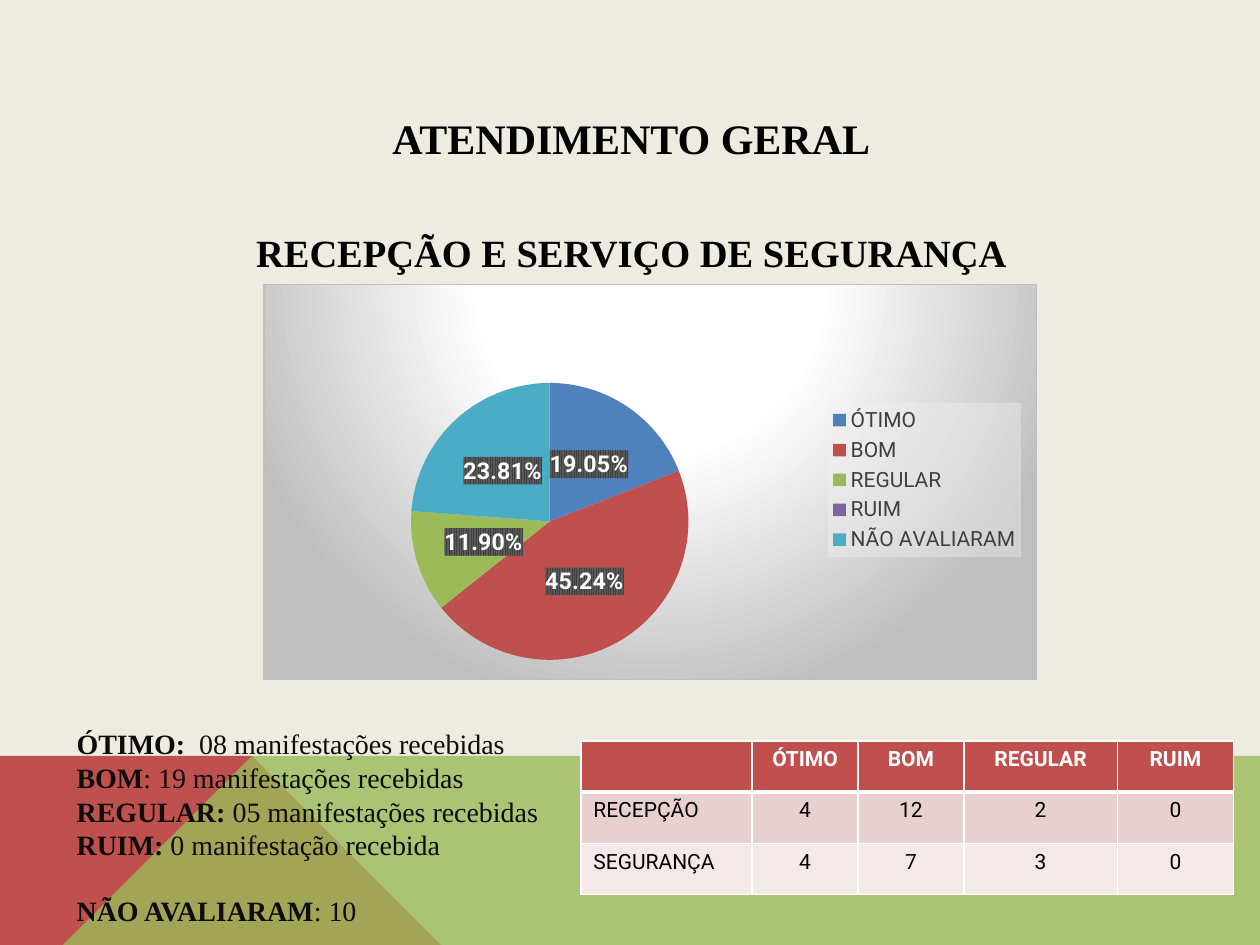
from lxml.etree import SubElement
from pptx import Presentation
from pptx.chart.data import CategoryChartData
from pptx.dml.color import RGBColor
from pptx.enum.chart import XL_CHART_TYPE, XL_LABEL_POSITION, XL_LEGEND_POSITION
from pptx.enum.text import PP_ALIGN
from pptx.oxml import parse_xml
from pptx.oxml.ns import nsdecls, qn
from pptx.util import Inches, Pt

HUES = {
    "back": "EEECE1", "red": "C0504D", "green": "9BBB59", "blue": "4F81BD",
    "violet": "8064A2", "aqua": "4BACC6", "black": "000000", "ink": "0D0D0D",
    "gray": "404040", "white": "FFFFFF", "rose": "E8D0D0", "pale": "F4E9E9",
}
SERIF, SANS = "Times New Roman", "Roboto"
SLICES = [
    ("ÓTIMO", 19.05, "blue"), ("BOM", 45.24, "red"), ("REGULAR", 11.9, "green"),
    ("RUIM", 0, "violet"), ("NÃO AVALIARAM", 23.81, "aqua"),
]
HEADS = [
    ("ATENDIMENTO GERAL", 24, 0),
    ("RECEPÇÃO E SERVIÇO DE SEGURANÇA", 22, 38),
]
NOTES = [
    ("ÓTIMO:  ", "08 manifestações recebidas", 0),
    ("BOM", ": 19 manifestações recebidas", 0),
    ("REGULAR: ", "05 manifestações recebidas", 0),
    ("RUIM: ", "0 manifestação recebida", 0),
    ("NÃO AVALIARAM", ": 10", 18.4),
]
ROWS = [
    ["", "ÓTIMO", "BOM", "REGULAR", "RUIM"],
    ["RECEPÇÃO", "4", "12", "2", "0"],
    ["SEGURANÇA", "4", "7", "3", "0"],
]
COLS = [1.36, 0.84, 0.84, 1.22, 0.92]


def tint(name):
    return RGBColor.from_string(HUES[name])


def style(font, hue, **look):
    for key, value in look.items():
        setattr(font, key, value)
    font.color.rgb = tint(hue)


def add_wedge(slide, points, hue, alpha=None):
    form = slide.shapes.build_freeform(*points[0], scale=Inches(1))
    form.add_line_segments(points[1:], close=True)
    wedge = form.convert_to_shape()
    wedge.shadow.inherit = False
    wedge.fill.solid()
    wedge.fill.fore_color.rgb = tint(hue)
    wedge.line.fill.background()
    if alpha:
        clr = wedge.fill._xPr.find(".//" + qn("a:srgbClr"))
        SubElement(clr, qn("a:alpha"), val=str(alpha * 1000))


def add_box(slide, *place):
    frame = slide.shapes.add_textbox(*map(Inches, place)).text_frame
    frame.word_wrap = True
    return frame


def add_line(frame, first, runs, gap, hue, size, align=None):
    """Add a paragraph of (text, bold) runs below a gap in points."""
    para = frame.paragraphs[0] if first else frame.add_paragraph()
    para.alignment = align
    para.space_before = Pt(gap)
    for text, bold in runs:
        run = para.add_run()
        run.text = text
        style(run.font, hue, name=SERIF, size=Pt(size), bold=bold)


def set_place(parent, x, y, w, h, inner=False):
    """Give a chart part a manual layout, in fractions of the chart."""
    target = '<c:layoutTarget val="inner"/>' if inner else ""
    modes = '<c:xMode val="edge"/><c:yMode val="edge"/>'
    sizes = "".join(f'<c:{k} val="{v}"/>' for k, v in zip("xywh", (x, y, w, h)))
    for old in parent.findall(qn("c:layout")):
        parent.remove(old)
    layout = parse_xml(f'<c:layout {nsdecls("c")}><c:manualLayout>{target}{modes}'
                       f'{sizes}</c:manualLayout></c:layout>')
    if inner:
        parent.insert(0, layout)
    else:
        parent.find(qn("c:legendPos")).addnext(layout)


def make_props(body):
    return parse_xml(f'<c:spPr {nsdecls("c", "a")}>{body}</c:spPr>')


def paint_back(chart):
    stops = "".join(f'<a:gs pos="{pos}000"><a:srgbClr val="{hue}"/></a:gs>'
                    for pos, hue in [(0, "FFFFFF"), (39, "FFFFFF"), (100, "BFBFBF")])
    chart._chartSpace.find(qn("c:chart")).addnext(make_props(
        f'<a:gradFill><a:gsLst>{stops}</a:gsLst><a:path path="circle">'
        '<a:fillToRect l="50000" t="-80000" r="50000" b="180000"/></a:path></a:gradFill>'
        '<a:ln w="9525"><a:solidFill><a:srgbClr val="BFBFBF"/></a:solidFill></a:ln>'))


def add_labels(plot):
    plot.has_data_labels = True
    labels = plot.data_labels
    looks = {"show_percentage": True, "show_value": False, "number_format": "0.00%",
             "number_format_is_linked": False, "position": XL_LABEL_POSITION.CENTER}
    for key, value in looks.items():
        setattr(labels, key, value)
    style(labels.font, "white", name=SANS, size=Pt(13.3), bold=True)
    root = labels._element
    root.find(qn("c:numFmt")).addnext(make_props(
        '<a:pattFill prst="narVert"><a:fgClr><a:srgbClr val="404040"/></a:fgClr>'
        '<a:bgClr><a:srgbClr val="595959"/></a:bgClr></a:pattFill>'))
    series = plot.series[0]._element
    series.find(qn("c:cat")).addprevious(root)
    root.insert(0, parse_xml(f'<c:dLbl {nsdecls("c")}><c:idx val="3"/>'
                             '<c:delete val="1"/></c:dLbl>'))


def add_pie(slide):
    data = CategoryChartData()
    data.categories = [name for name, _, _ in SLICES]
    data.add_series("Series 1", [value for _, value, _ in SLICES])
    place = map(Inches, (2.09, 2.25, 6.14, 3.15))
    chart = slide.shapes.add_chart(XL_CHART_TYPE.PIE, *place, data).chart
    chart.has_title = False
    style(chart.font, "black", name=SANS, size=Pt(10))
    paint_back(chart)
    plot = chart.plots[0]
    plot.vary_by_categories = True
    for i, (_, _, hue) in enumerate(SLICES):
        fill = plot.series[0].points[i].format.fill
        fill.solid()
        fill.fore_color.rgb = tint(hue)
    add_labels(plot)
    set_place(chart._chartSpace.find(".//" + qn("c:plotArea")),
              0.19, 0.25, 0.36, 0.7, inner=True)
    chart.has_legend = True
    legend = chart.legend
    legend.position = XL_LEGEND_POSITION.RIGHT
    legend.include_in_layout = False
    style(legend.font, "gray", name=SANS, size=Pt(12))
    root = legend._element
    set_place(root, 0.73, 0.3, 0.25, 0.39)
    root.find(qn("c:overlay")).addnext(make_props(
        '<a:solidFill><a:srgbClr val="F2F2F2"><a:alpha val="39000"/></a:srgbClr></a:solidFill>'))


def set_edges(cell, base):
    """Draw white cell borders, with the bottom one base points wide."""
    props = cell._tc.get_or_add_tcPr()
    for i, (side, width) in enumerate(zip("LRTB", (1, 1, 1, base))):
        props.insert(i, parse_xml(
            f'<a:ln{side} {nsdecls("a")} w="{width * 12700}"><a:solidFill>'
            f'<a:srgbClr val="{HUES["white"]}"/></a:solidFill></a:ln{side}>'))


def add_grid(slide):
    place = map(Inches, (4.61, 5.88, sum(COLS), 1.22))
    table = slide.shapes.add_table(len(ROWS), len(COLS), *place).table
    for col, width in zip(table.columns, COLS):
        col.width = Inches(width)
    for r, (row, hue) in enumerate(zip(ROWS, ("red", "rose", "pale"))):
        for c, text in enumerate(row):
            cell = table.cell(r, c)
            cell.fill.solid()
            cell.fill.fore_color.rgb = tint(hue)
            set_edges(cell, 1 if r else 3)
            cell.text = text
            para = cell.text_frame.paragraphs[0]
            para.alignment = PP_ALIGN.CENTER if c else PP_ALIGN.LEFT
            style(para.font, "black" if r else "white",
                  name=SANS, size=Pt(12), bold=r == 0)


def main():
    deck = Presentation()
    deck.slide_width, deck.slide_height = Inches(10), Inches(7.5)
    slide = deck.slides.add_slide(deck.slide_layouts[6])
    slide.background.fill.solid()
    slide.background.fill.fore_color.rgb = tint("back")
    add_wedge(slide, [(0, 7.5), (0, 5.52), (2.23, 5.52), (3.91, 7.5)], "red")
    add_wedge(slide, [(0, 7.5), (2.23, 5.52), (10, 5.53), (10, 7.5)], "green", 80)
    head = add_box(slide, 0.9, 0.84, 8.22, 4.28)
    for i, (text, size, gap) in enumerate(HEADS):
        add_line(head, i == 0, [(text, True)], gap, "black", size, PP_ALIGN.CENTER)
    add_pie(slide)
    notes = add_box(slide, 0.51, 5.72, 4.25, 2.02)
    for i, (name, text, gap) in enumerate(NOTES):
        add_line(notes, i == 0, [(name, True), (text, False)], gap, "ink", 16)
    add_grid(slide)
    deck.save("out.pptx")


if __name__ == "__main__":
    main()
